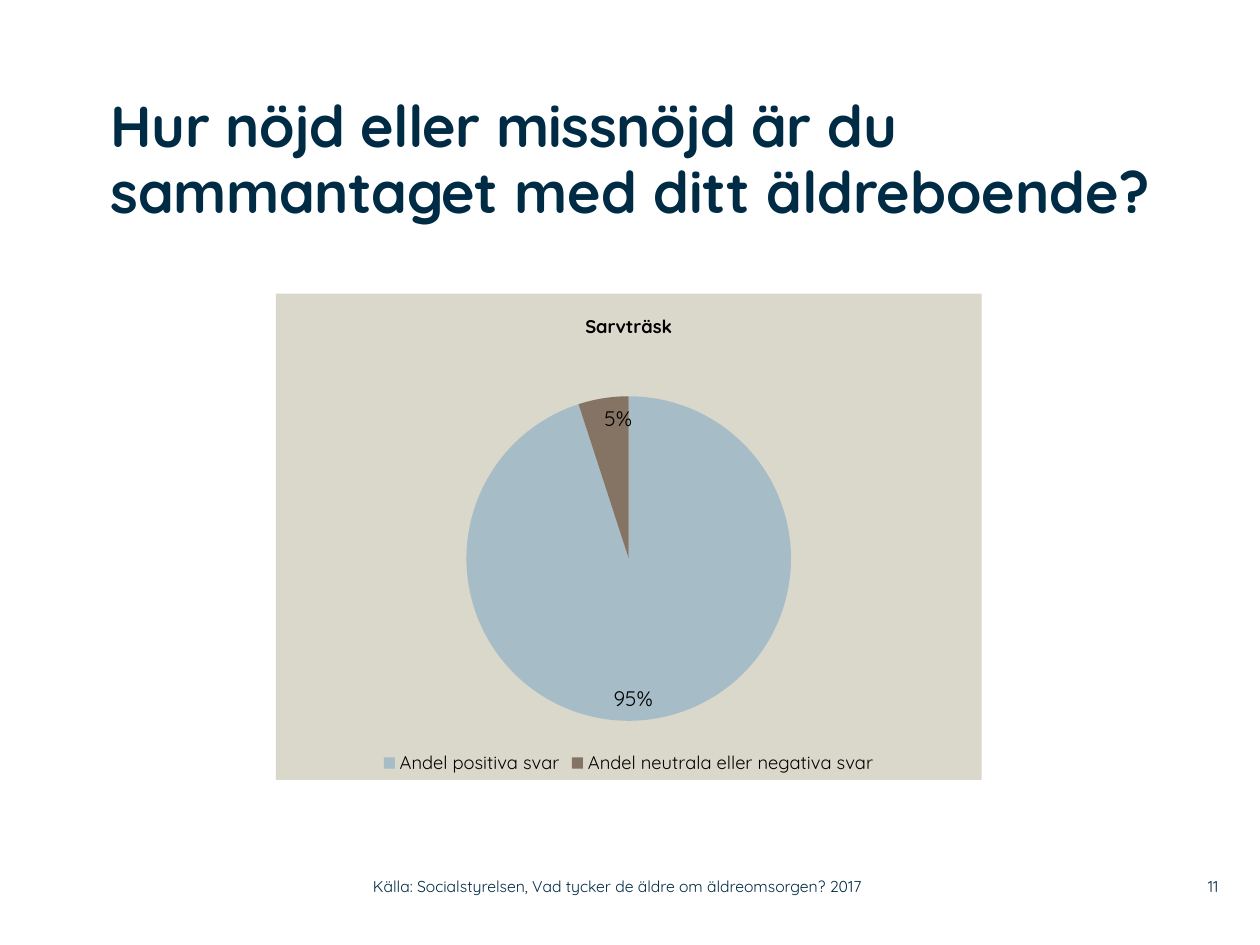
from lxml import etree
from pptx import Presentation
from pptx import util as u
from pptx.chart.data import CategoryChartData
from pptx.dml.color import RGBColor
from pptx.enum import chart as ch
from pptx.enum import text as t
from pptx.oxml import ns

NAVY = RGBColor(0x00, 0x2B, 0x45)
BLACK = RGBColor(0, 0, 0)
SAND = RGBColor(0xDA, 0xD7, 0xCB)
BLUE = RGBColor(0xA6, 0xBC, 0xC6)
BROWN = RGBColor(0x85, 0x73, 0x63)
FONT = "Quicksand"
WIDTH, HEIGHT = u.Inches(10), u.Inches(7.5)
FOOTER_TOP, FOOTER_HEIGHT = 6.89 / 7.5, 0.29 / 7.5


def box(left, top, width, height):
    """Turn shares of the slide's size into lengths."""
    return (round(left * WIDTH), round(top * HEIGHT),
            round(width * WIDTH), round(height * HEIGHT))


def style_font(font, size, color=BLACK, bold=False):
    font.name, font.size, font.bold = FONT, u.Pt(size), bold
    font.color.rgb = color


def write(sp, *runs, size, bold=False, color=NAVY, align=t.PP_ALIGN.LEFT,
          anchor=t.MSO_ANCHOR.MIDDLE, line_spacing=1.0):
    """Fill a shape with one paragraph; each run is (text, letter spacing)."""
    tf = sp.text_frame
    tf.word_wrap, tf.auto_size = True, t.MSO_AUTO_SIZE.NONE
    tf.vertical_anchor = anchor
    tf.margin_left = tf.margin_right = tf.margin_top = tf.margin_bottom = 0
    p = tf.paragraphs[0]
    p.alignment, p.line_spacing = align, line_spacing
    p.space_before = u.Pt(0)
    for words, spacing in runs:
        r = p.add_run()
        r.text = words
        style_font(r.font, size, color, bold)
        if spacing:
            r.font._element.set("spc", str(round(spacing * 100)))


def add_title(s):
    sp = s.shapes.title
    sp.left, sp.top, sp.width, sp.height = box(0.088, 0.1, 0.883, 0.19)
    write(sp, ("Hur nöjd eller missnöjd är du sammantaget ", -0.3),
          ("med ditt äldreboende?", 0), size=33, bold=True,
          anchor=t.MSO_ANCHOR.TOP, line_spacing=0.95)


def add_footer(s, words, left, width, **style):
    sp = s.shapes.add_textbox(*box(left, FOOTER_TOP, width, FOOTER_HEIGHT))
    write(sp, (words, 0), size=9, **style)


def place_plot(chart, **shares):
    """Fix the inner plot area, in shares of the chart's size."""
    area = chart._chartSpace.chart.plotArea
    for old in area.findall(ns.qn("c:layout")):
        area.remove(old)
    layout = etree.Element(ns.qn("c:layout"))
    manual = etree.SubElement(layout, ns.qn("c:manualLayout"))
    settings = {"layoutTarget": "inner", "xMode": "edge", "yMode": "edge", **shares}
    for tag, val in settings.items():
        etree.SubElement(manual, ns.qn("c:" + tag)).set("val", str(val))
    area.insert(0, layout)


def fill_chart_background(chart, color):
    props = etree.Element(ns.qn("c:spPr"))
    fill = etree.SubElement(props, ns.qn("a:solidFill"))
    etree.SubElement(fill, ns.qn("a:srgbClr")).set("val", str(color))
    line = etree.SubElement(props, ns.qn("a:ln"))
    etree.SubElement(line, ns.qn("a:noFill"))
    chart._chartSpace.chart.addnext(props)


def add_pie(s):
    data = CategoryChartData()
    data.categories = ["Andel positiva svar", "Andel neutrala eller negativa svar"]
    data.add_series("Series 1", (95, 5))
    chart = s.shapes.add_chart(ch.XL_CHART_TYPE.PIE,
                               *box(0.219, 2.33 / 7.5, 0.56, 3.86 / 7.5),
                               data).chart
    style_font(chart.font, 18)
    fill_chart_background(chart, SAND)
    place_plot(chart, x=0.27, y=0.21, w=0.46, h=0.67)

    # Title and legend
    chart.has_title = True
    p = chart.chart_title.text_frame.paragraphs[0]
    r = p.add_run()
    r.text = "Sarvträsk"
    style_font(r.font, 10.5, bold=True)
    chart.chart_title.include_in_layout = False
    chart.has_legend = True
    chart.legend.position = ch.XL_LEGEND_POSITION.BOTTOM
    chart.legend.include_in_layout = False
    style_font(chart.legend.font, 10.5)

    # Slices and labels
    plot = chart.plots[0]
    plot.vary_by_categories = True
    series = plot.series[0]
    for i, color in enumerate((BLUE, BROWN)):
        slice_format = series.points[i].format
        slice_format.fill.solid()
        slice_format.fill.fore_color.rgb = color
        slice_format.line.fill.background()
    labels = series.data_labels
    labels.show_percentage, labels.show_value = True, False
    labels.number_format, labels.number_format_is_linked = "0%", False
    labels.position = ch.XL_LABEL_POSITION.INSIDE_END
    style_font(labels.font, 12)


def main():
    prs = Presentation()
    prs.slide_width, prs.slide_height = WIDTH, HEIGHT
    s = prs.slides.add_slide(prs.slide_layouts.get_by_name("Title Only"))
    add_footer(s, "11", 0.92, 0.047, align=t.PP_ALIGN.RIGHT)
    add_footer(s, "Källa: Socialstyrelsen, Vad tycker de äldre om äldreomsorgen? 2017",
               0.296, 0.443)
    add_title(s)
    add_pie(s)
    prs.save("out.pptx")


if __name__ == "__main__":
    main()
